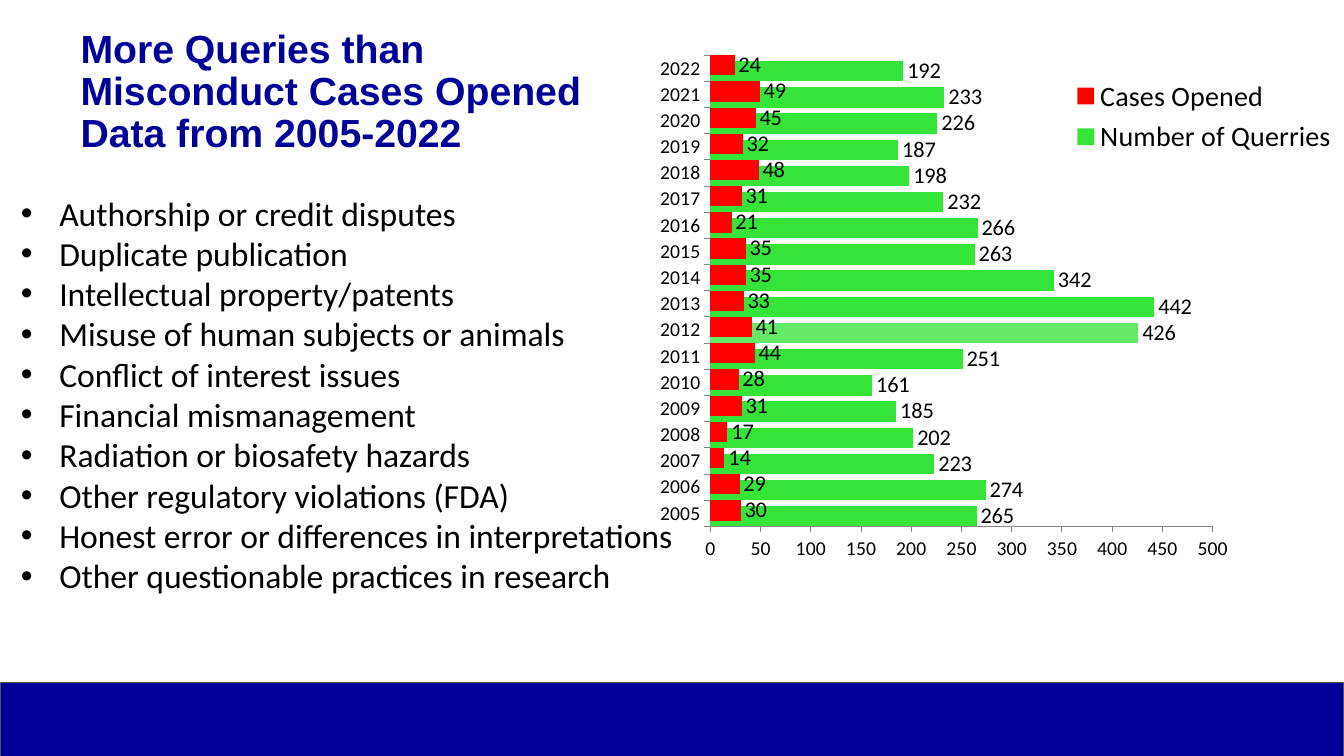
from lxml import etree
from pptx import Presentation
from pptx.chart.data import CategoryChartData
from pptx.dml.color import RGBColor
from pptx.enum import chart as ch, shapes, text
from pptx.oxml import ns
from pptx.util import Inches, Pt

COLORS = {"navy": "000099", "border": "575757", "black": "000000", "axis": "868686",
          "queries": "35E339", "queries_light": "64EA67", "cases": "FF0000"}

TITLE = "More Queries than Misconduct Cases Opened \vData from 2005-2022"
ISSUES = [
    "Authorship or credit disputes",
    "Duplicate publication",
    "Intellectual property/patents",
    "Misuse of human subjects or animals",
    "Conflict of interest issues",
    "Financial mismanagement",
    "Radiation or biosafety hazards",
    "Other regulatory violations (FDA)",
    "Honest error or differences in interpretations",
    "Other questionable practices in research",
]
YEARS = [str(year) for year in range(2005, 2023)]
SERIES = [
    ("Number of Querries", "queries", [265, 274, 223, 202, 185, 161, 251, 426, 442,
                                       342, 263, 266, 232, 198, 187, 226, 233, 192]),
    ("Cases Opened", "cases", [30, 29, 14, 17, 31, 28, 44, 41, 33,
                               35, 35, 21, 31, 48, 32, 45, 49, 24]),
]


def rgb(name):
    return RGBColor.from_string(COLORS[name])


def set_font(font, size, color="black", name="Calibri", bold=False):
    font.name, font.size, font.bold = name, Pt(size), bold
    font.color.rgb = rgb(color)


def add_text_frame(s, x, y, w, h):
    tf = s.shapes.add_textbox(Inches(x), Inches(y), Inches(w), Inches(h)).text_frame
    tf.word_wrap = True
    return tf


def add_footer_band(s, x, y, w, h):
    sp = s.shapes.add_shape(shapes.MSO_SHAPE.RECTANGLE,
                            Inches(x), Inches(y), Inches(w), Inches(h))
    sp.shadow.inherit = False
    sp.fill.solid()
    sp.fill.fore_color.rgb = rgb("navy")
    sp.line.color.rgb = rgb("border")
    sp.line.width = Pt(1)


def add_title(s, x, y, w, h):
    tf = add_text_frame(s, x, y, w, h)
    tf.vertical_anchor = text.MSO_ANCHOR.BOTTOM
    p = tf.paragraphs[0]
    p.text = TITLE
    p.line_spacing = 0.9
    for r in p.runs:
        set_font(r.font, 28, "navy", "Arial", True)


def add_issue_list(s, x, y, w, h):
    tf = add_text_frame(s, x, y, w, h)
    tf.text = "\n".join(ISSUES)
    indent = Inches(0.38)
    for p in tf.paragraphs:
        pPr = p._p.get_or_add_pPr()
        pPr.set("marL", str(indent))
        pPr.set("indent", str(-indent))
        etree.SubElement(pPr, ns.qn("a:buFont")).set("typeface", "Arial")
        etree.SubElement(pPr, ns.qn("a:buChar")).set("char", "•")
        for r in p.runs:
            set_font(r.font, 24)


def set_layout(parent, index, x, y, w, h, inner=False):
    """Place a chart part by fractions of the chart's size."""
    for old in parent.findall(ns.qn("c:layout")):
        parent.remove(old)
    layout = etree.Element(ns.qn("c:layout"))
    manual = etree.SubElement(layout, ns.qn("c:manualLayout"))
    settings = [("layoutTarget", "inner")] if inner else []
    settings += [("xMode", "edge"), ("yMode", "edge"),
                 ("x", x), ("y", y), ("w", w), ("h", h)]
    for tag, value in settings:
        etree.SubElement(manual, ns.qn("c:" + tag)).set("val", str(value))
    parent.insert(index, layout)


def style_axis(axis):
    axis.has_major_gridlines = False
    axis.major_tick_mark = ch.XL_TICK_MARK.OUTSIDE
    axis.minor_tick_mark = ch.XL_TICK_MARK.NONE
    axis.format.line.color.rgb = rgb("axis")
    set_font(axis.tick_labels.font, 14)


def style_series(series, color):
    series.format.fill.solid()
    series.format.fill.fore_color.rgb = rgb(color)
    labels = series.data_labels
    labels.show_value = True
    labels.position = ch.XL_LABEL_POSITION.OUTSIDE_END
    set_font(labels.font, 16)


def add_case_chart(s, x, y, w, h):
    data = CategoryChartData()
    data.categories = YEARS
    for name, _, values in SERIES:
        data.add_series(name, values)
    chart = s.shapes.add_chart(ch.XL_CHART_TYPE.BAR_CLUSTERED, Inches(x), Inches(y),
                               Inches(w), Inches(h), data).chart
    set_font(chart.font, 12)
    chart.has_title = False
    plot = chart.plots[0]
    plot.vary_by_categories = False
    plot.gap_width = 0
    plot.overlap = 71
    for series, (_, color, _) in zip(plot.series, SERIES):
        style_series(series, color)
    fill = plot.series[0].points[YEARS.index("2012")].format.fill
    fill.solid()
    fill.fore_color.rgb = rgb("queries_light")

    for axis in (chart.category_axis, chart.value_axis):
        style_axis(axis)
    chart.value_axis.minimum_scale = 0
    chart.value_axis.maximum_scale = 500
    chart.value_axis.major_unit = 50

    chart.has_legend = True
    legend = chart.legend
    legend.position = ch.XL_LEGEND_POSITION.RIGHT
    legend.include_in_layout = False
    set_font(legend.font, 20)
    set_layout(legend._element, 1, 0.57, 0.15, 0.32, 0.14)
    set_layout(chart._chartSpace.chart.plotArea, 0, 0.149, 0.122, 0.591, 0.753, inner=True)


def main():
    prs = Presentation()
    prs.slide_width, prs.slide_height = Inches(13.33), Inches(7.5)
    s = prs.slides.add_slide(prs.slide_layouts[6])
    add_footer_band(s, 0, 6.77, 13.33, 0.74)
    add_title(s, 0.7, 0.05, 5.31, 1.55)
    add_case_chart(s, 5.79, -0.21, 8.43, 6.21)
    add_issue_list(s, 0.11, 1.86, 6.95, 4.14)
    prs.save("out.pptx")


if __name__ == "__main__":
    main()
